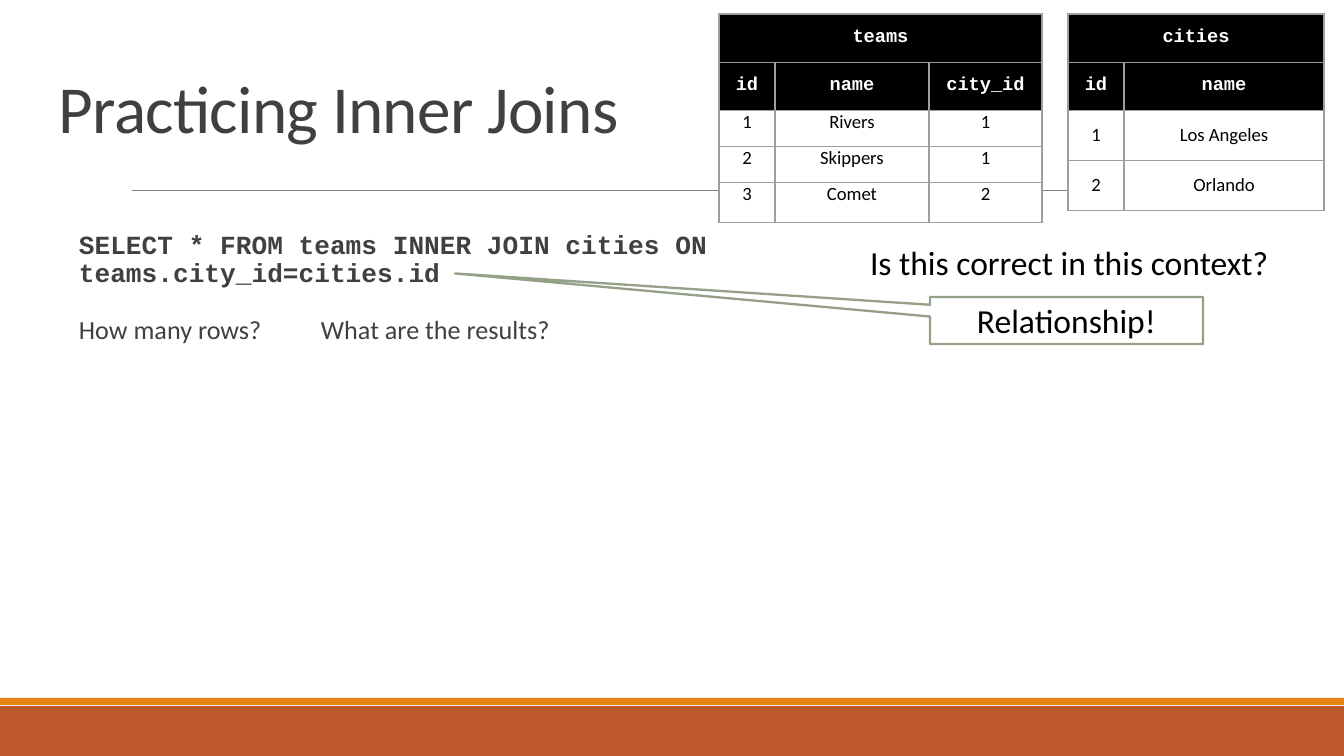
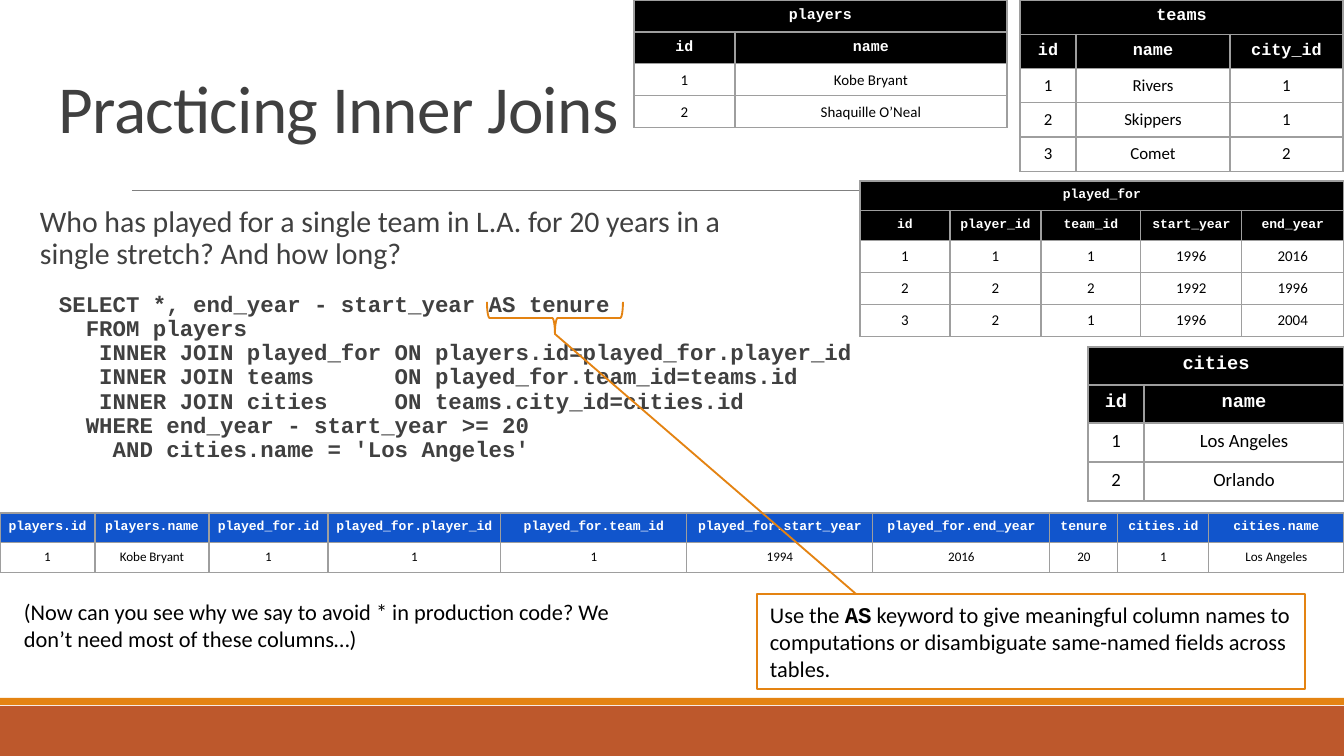
from dataclasses import dataclass

from lxml.etree import SubElement
from pptx import Presentation
from pptx.dml.color import RGBColor
from pptx.enum.shapes import MSO_CONNECTOR, MSO_SHAPE
from pptx.enum.text import MSO_ANCHOR, PP_ALIGN
from pptx.oxml.ns import qn
from pptx.util import Emu, Pt

# Scale, colours and fonts
WIDE, HIGH = 1344, 756
SCALE = 9144000 / WIDE
WHITE = RGBColor(0xFF, 0xFF, 0xFF)
BLACK = RGBColor(0x00, 0x00, 0x00)
DARK = RGBColor(0x40, 0x40, 0x40)
GRAY = RGBColor(0x80, 0x80, 0x80)
EDGE = RGBColor(0x9E, 0x9E, 0x9E)
RUST = RGBColor(0xBD, 0x58, 0x2C)
ORANGE = RGBColor(0xE4, 0x83, 0x12)
SAGE = RGBColor(0x94, 0xA0, 0x88)
BLUE = RGBColor(0x11, 0x55, 0xCC)
SANS, MONO = "Calibri", "Courier New"


@dataclass(frozen=True)
class Box:
    left: int
    top: int
    width: int
    height: int


@dataclass(frozen=True)
class Style:
    size: int
    font: str = SANS
    color: RGBColor = BLACK
    bold: bool = False


@dataclass(frozen=True)
class Grid:
    left: int
    top: int
    cols: list[int]
    rows: list[int]
    head: list[str]
    data: list[list[str]]
    size: int
    name: str = ""
    small: int = 0  # body size when it differs from the head
    fill: RGBColor = BLACK
    body: RGBColor | None = None
    pad: int = 7
    lift: int = 7  # top inset of the body cells


PLAIN = (13, 7, 13, 7)
EVEN = (13, 13, 13, 13)
DEEP = (33, 13, 13, 13)
TEAMS = [["1", "Rivers", "1"], ["2", "Skippers", "1"], ["3", "Comet", "2"]]
CITIES = [["1", "Los Angeles"], ["2", "Orlando"]]
TEAM_HEAD, NAME_HEAD = ["id", "name", "city_id"], ["id", "name"]
TEAM_COLS, CITY_COLS = [56, 154, 113], [56, 200]


def px(num: float) -> Emu:
    return Emu(round(num * SCALE))


def place(box: Box) -> tuple[Emu, Emu, Emu, Emu]:
    return px(box.left), px(box.top), px(box.width), px(box.height)


# Text
def paint(run, style: Style) -> None:
    run.font.size = Pt(style.size)
    run.font.name = style.font
    run.font.bold = style.bold
    run.font.color.rgb = style.color


def format_text(frame, style: Style, space: float = 1.0,
                align: PP_ALIGN = PP_ALIGN.LEFT) -> None:
    for par in frame.paragraphs:
        par.alignment = align
        par.line_spacing = space
        for run in par.runs:
            paint(run, style)


def set_frame(frame, pads: tuple[int, int, int, int]) -> None:
    frame.word_wrap = True
    frame.margin_left, frame.margin_top, frame.margin_right, frame.margin_bottom = map(px, pads)


def add_text(slide, box: Box, text: str, style: Style,
             pads: tuple[int, int, int, int] = EVEN, space: float = 1.0):
    frame = slide.shapes.add_textbox(*place(box)).text_frame
    set_frame(frame, pads)
    frame.text = text
    format_text(frame, style, space)
    return frame


# Shapes and lines
def add_form(slide, kind: MSO_SHAPE, box: Box, fill: RGBColor | None = None,
             line: RGBColor | None = None, width: float = 1):
    form = slide.shapes.add_shape(kind, *place(box))
    form.shadow.inherit = False
    if fill is None:
        form.fill.background()
    else:
        form.fill.solid()
        form.fill.fore_color.rgb = fill
    if line is None:
        form.line.fill.background()
    else:
        form.line.color.rgb = line
        form.line.width = Pt(width)
    return form


def add_line(slide, start: tuple[int, int], end: tuple[int, int],
             color: RGBColor, width: float) -> None:
    line = slide.shapes.add_connector(MSO_CONNECTOR.STRAIGHT, *map(px, start + end))
    line.line.color.rgb = color
    line.line.width = Pt(width)
    SubElement(line._element.spPr, qn("a:effectLst"))


# Tables
def add_edge(cell) -> None:
    props = cell._tc.get_or_add_tcPr()
    for spot, side in enumerate(("lnL", "lnR", "lnT", "lnB")):
        edge = SubElement(props, qn(f"a:{side}"), w=str(Pt(0.75)))
        fill = SubElement(edge, qn("a:solidFill"))
        SubElement(fill, qn("a:srgbClr"), val=str(EDGE))
        props.insert(spot, edge)


def add_grid(slide, grid: Grid) -> None:
    wide = len(grid.cols)
    lines = [grid.head, *grid.data]
    if grid.name:
        lines.insert(0, [grid.name] + [""] * (wide - 1))
    heads = len(lines) - len(grid.data)
    box = Box(grid.left, grid.top, sum(grid.cols), sum(grid.rows))
    table = slide.shapes.add_table(len(lines), wide, *place(box)).table
    table.first_row = table.horz_banding = False
    for col, width in zip(table.columns, grid.cols):
        col.width = px(width)
    for row, height in zip(table.rows, grid.rows):
        row.height = px(height)
    if grid.name:
        table.cell(0, 0).merge(table.cell(0, wide - 1))
    top = Style(grid.size, MONO, WHITE, True)
    low = Style(grid.small or grid.size)
    for r, line in enumerate(lines):
        is_head = r < heads
        fill = grid.fill if is_head else grid.body
        for c, text in enumerate(line):
            cell = table.cell(r, c)
            cell.margin_left = cell.margin_right = cell.margin_bottom = px(grid.pad)
            cell.margin_top = px(grid.pad if is_head else grid.lift)
            if fill is None:
                cell.fill.background()
            else:
                cell.fill.solid()
                cell.fill.fore_color.rgb = fill
            add_edge(cell)
            if text:
                cell.text_frame.text = text
                format_text(cell.text_frame, top if is_head else low, align=PP_ALIGN.CENTER)


# Shared base: bands, rule and title
def add_base(deck):
    slide = deck.slides.add_slide(deck.slide_layouts[6])
    add_form(slide, MSO_SHAPE.RECTANGLE, Box(0, 706, WIDE, 50), RUST)
    add_form(slide, MSO_SHAPE.RECTANGLE, Box(0, 698, WIDE, 7), ORANGE)
    add_line(slide, (132, 191), (1230, 191), GRAY, 0.5)
    frame = add_text(slide, Box(46, 66, 1253, 85), "Practicing Inner Joins",
                     Style(36, color=DARK), space=0.85)
    frame.paragraphs[0].runs[0].font._element.set("spc", "-40")
    return slide


def make_first(deck) -> None:
    slide = add_base(deck)
    # Query and questions
    frame = add_text(
        slide, Box(46, 219, 808, 125),
        "SELECT * FROM teams INNER JOIN cities ON teams.city_id=cities.id\n"
        "How many rows?\tWhat are the results?",
        Style(14, MONO, DARK, True), DEEP, 0.9)
    ask = frame.paragraphs[1]
    ask.space_before = Pt(15)
    tabs = SubElement(ask._p.get_or_add_pPr(), qn("a:tabLst"))
    SubElement(tabs, qn("a:tab"), pos=str(px(242)), algn="l")
    for run in ask.runs:
        paint(run, Style(14, color=DARK))
    # Source tables
    add_grid(slide, Grid(719, 14, TEAM_COLS, [48, 48, 36, 36, 40], TEAM_HEAD, TEAMS, 10,
                         "teams", body=WHITE, pad=13, lift=0))
    add_grid(slide, Grid(1068, 14, CITY_COLS, [48, 48, 50, 50], NAME_HEAD, CITIES, 10,
                         "cities", body=WHITE, pad=13, lift=13))
    # Hint and callout
    add_text(slide, Box(837, 235, 468, 54), "Is this correct in this context?",
             Style(18), (33, 7, 13, 7))
    call = add_form(slide, MSO_SHAPE.RECTANGULAR_CALLOUT, Box(930, 297, 273, 47),
                    WHITE, SAGE, 1.25)
    call.adjustments[0], call.adjustments[1] = -2.24, -1.0
    frame = call.text_frame
    set_frame(frame, PLAIN)
    frame.vertical_anchor = MSO_ANCHOR.MIDDLE
    frame.text = "Relationship!"
    format_text(frame, Style(18), align=PP_ALIGN.CENTER)


def make_second(deck) -> None:
    slide = add_base(deck)
    # Query result
    add_grid(slide, Grid(
        0, 513, [95, 114, 119, 173, 186, 186, 177, 68, 91, 135], [28, 29],
        ["players.id", "players.name", "played_for.id", "played_for.player_id",
         "played_for.team_id", "played_for.start_year", "played_for.end_year",
         "tenure", "cities.id", "cities.name"],
        [["1", "Kobe Bryant", "1", "1", "1", "1994", "2016", "20", "1", "Los Angeles"]],
        7, fill=BLUE))
    # Question and query
    add_text(slide, Box(27, 194, 728, 91),
             "Who has played for a single team in L.A. for 20 years in a single stretch? "
             "And how long?", Style(16, color=DARK), space=0.9)
    add_text(slide, Box(46, 280, 852, 191), "\n".join([
        "SELECT *, end_year - start_year AS tenure",
        "  FROM players",
        "   INNER JOIN played_for ON players.id=played_for.player_id",
        "   INNER JOIN teams      ON played_for.team_id=teams.id",
        "   INNER JOIN cities     ON teams.city_id=cities.id",
        "  WHERE end_year - start_year >= 20",
        "    AND cities.name = 'Los Angeles'",
    ]), Style(12, MONO, DARK, True), space=0.9)
    # Source tables
    add_grid(slide, Grid(1020, 0, TEAM_COLS, [32, 32, 34, 34, 34], TEAM_HEAD, TEAMS, 9,
                         "teams"))
    add_grid(slide, Grid(1088, 347, CITY_COLS, [38, 38, 39, 39], NAME_HEAD, CITIES, 10,
                         "cities"))
    add_grid(slide, Grid(634, 0, [101, 272], [30, 30, 32, 32], NAME_HEAD,
                         [["1", "Kobe Bryant"], ["2", "Shaquille O’Neal"]], 8, "players"))
    add_grid(slide, Grid(
        860, 181, [90, 91, 100, 101, 102], [28, 28, 32, 32, 32],
        ["id", "player_id", "team_id", "start_year", "end_year"],
        [["1", "1", "1", "1996", "2016"],
         ["2", "2", "2", "1992", "1996"],
         ["3", "2", "1", "1996", "2004"]], 7, "played_for", small=8))
    # Side note
    add_text(slide, Box(11, 585, 616, 114),
             "(Now can you see why we say to avoid * in production code? "
             "We don’t need most of these columns…)", Style(12))
    # Brace, tip and the line between them
    brace = add_form(slide, MSO_SHAPE.LEFT_BRACE, Box(539, 250, 32, 136), line=ORANGE)
    brace.rotation = 270
    tip = add_form(slide, MSO_SHAPE.RECTANGLE, Box(757, 594, 548, 95),
                   line=ORANGE, width=0.75)
    frame = tip.text_frame
    set_frame(frame, PLAIN)
    frame.vertical_anchor = MSO_ANCHOR.TOP
    par = frame.paragraphs[0]
    par.alignment = PP_ALIGN.LEFT
    for text, style in (
        ("Use the ", Style(12)),
        ("AS", Style(12, MONO, bold=True)),
        (" keyword to give meaningful column names to computations or "
         "disambiguate same-named fields across tables.", Style(12)),
    ):
        run = par.add_run()
        run.text = text
        paint(run, style)
    add_line(slide, (555, 334), (856, 594), ORANGE, 1)


def main() -> None:
    deck = Presentation()
    deck.slide_width, deck.slide_height = px(WIDE), px(HIGH)
    make_first(deck)
    make_second(deck)
    deck.save("out.pptx")


if __name__ == "__main__":
    main()
